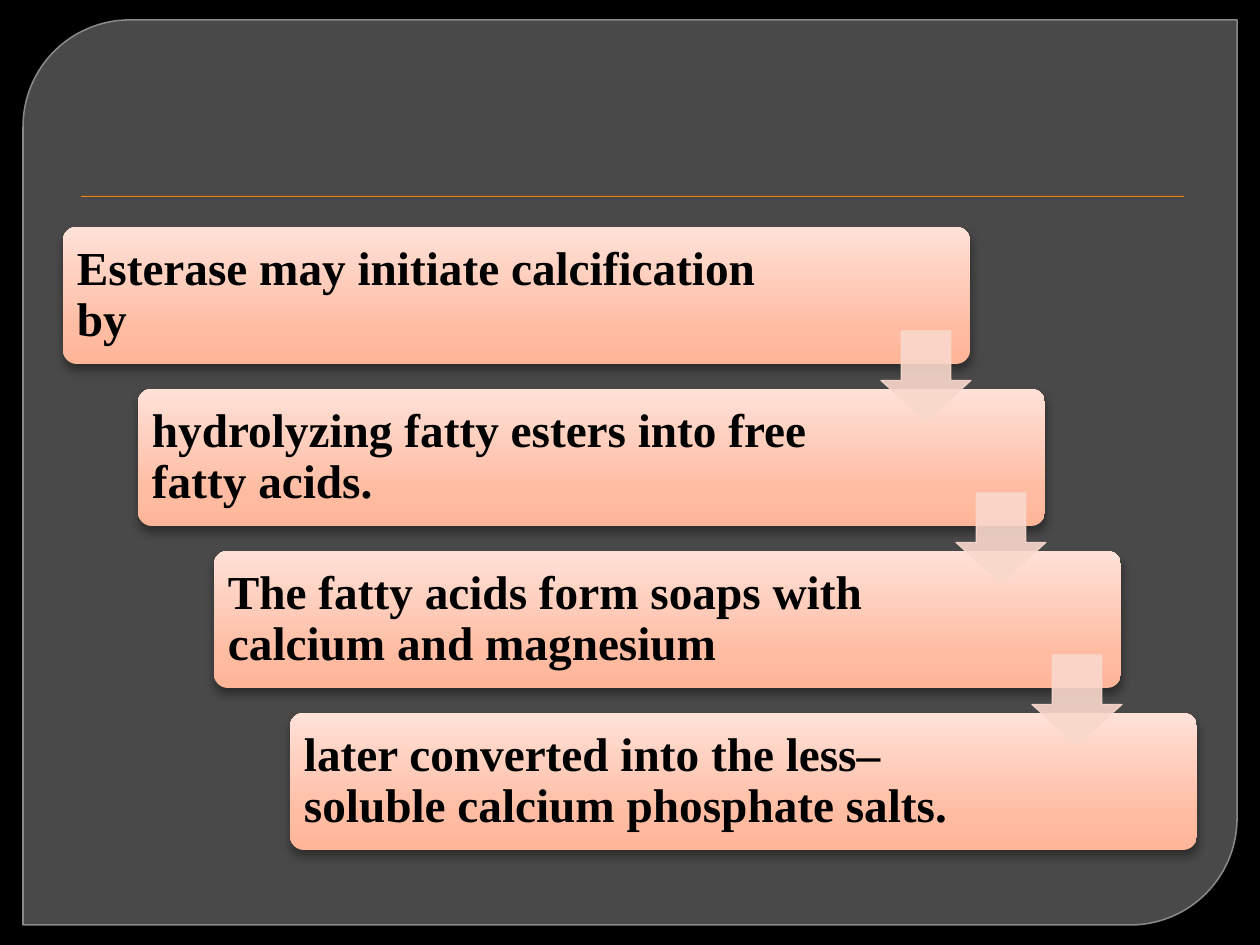
from dataclasses import dataclass

from lxml import etree
from pptx import Presentation
from pptx.dml.color import RGBColor
from pptx.enum.shapes import MSO_SHAPE
from pptx.enum.text import MSO_ANCHOR
from pptx.oxml import parse_xml
from pptx.util import Emu, Pt

PANEL = MSO_SHAPE.ROUND_2_DIAG_RECTANGLE
RECT = MSO_SHAPE.RECTANGLE
ROUND = MSO_SHAPE.ROUNDED_RECTANGLE
ARROW = MSO_SHAPE.DOWN_ARROW
MIDDLE = MSO_ANCHOR.MIDDLE
NS = "http://schemas.openxmlformats.org/drawingml/2006/main"
STOPS = ((0, "FFB598"), (25, "FFBCA2"), (100, "FFE1D8"))
PEACH = "F9D8CC"


@dataclass
class Box:
    x: int
    y: int
    w: int
    h: int


@dataclass
class Step:
    box: Box
    text: str


def px(n: int) -> Emu:
    return Emu(round(n * 914400 / 126))


def paint(color, value: str) -> None:
    color.rgb = RGBColor.from_string(value)


def fade(part, alpha: int) -> None:
    for color in part.iter(f"{{{NS}}}srgbClr"):
        etree.SubElement(color, f"{{{NS}}}alpha", val=str(alpha * 1000))


def add_shape(slide, kind, box: Box, adj: tuple = ()):
    shape = slide.shapes.add_shape(kind, px(box.x), px(box.y), px(box.w), px(box.h))
    shape.shadow.inherit = False
    shape.line.fill.background()
    for i, value in enumerate(adj):
        shape.adjustments[i] = value
    return shape


def fill(shape, value: str) -> None:
    shape.fill.solid()
    paint(shape.fill.fore_color, value)


def edge(shape, value: str, width: float) -> None:
    paint(shape.line.color, value)
    shape.line.width = Pt(width)


def blend(shape) -> None:
    stops = "".join(
        f'<a:gs pos="{pos * 1000}"><a:srgbClr val="{value}"/></a:gs>'
        for pos, value in STOPS
    )
    grad = parse_xml(
        f'<a:gradFill xmlns:a="{NS}" rotWithShape="1"><a:gsLst>{stops}</a:gsLst>'
        '<a:lin ang="16200000" scaled="0"/></a:gradFill>'
    )
    shape._element.spPr.find(f"{{{NS}}}prstGeom").addnext(grad)


def shade(shape, blur: float, dist: float, alpha: int) -> None:
    effects = shape._element.spPr.find(f"{{{NS}}}effectLst")
    effects.append(parse_xml(
        f'<a:outerShdw xmlns:a="{NS}" blurRad="{Pt(blur)}" dist="{Pt(dist)}" '
        'dir="5400000" rotWithShape="0"><a:srgbClr val="000000">'
        f'<a:alpha val="{alpha * 1000}"/></a:srgbClr></a:outerShdw>'
    ))


def draw_back(slide) -> None:
    back = slide.background.fill
    back.solid()
    paint(back.fore_color, "000000")
    panel = add_shape(slide, PANEL, Box(23, 20, 1214, 905), (0.118, 0))
    fill(panel, "717171")
    fade(panel._element.spPr, 65)
    edge(panel, "898989", 0.87)
    rule = add_shape(slide, RECT, Box(81, 196, 1103, 1))
    fill(rule, "F07F09")
    shade(rule, 1, 1, 75)


def draw_step(slide, step: Step) -> None:
    box = step.box
    card = add_shape(slide, ROUND, box, (0.1,))
    blend(card)
    shade(card, 5.2, 3, 40)
    label = slide.shapes.add_textbox(px(box.x), px(box.y), px(743), px(box.h))
    frame = label.text_frame
    frame.word_wrap = True
    frame.vertical_anchor = MIDDLE
    frame.margin_left = frame.margin_right = px(14)
    frame.margin_top = frame.margin_bottom = px(14)
    frame.text = step.text
    line = frame.paragraphs[0]
    line.line_spacing = 0.9
    font = line.runs[0].font
    font.name = "Times New Roman"
    font.size = Pt(27)
    font.bold = True
    paint(font.color, "000000")


def draw_arrow(slide, step: Step) -> None:
    box = Box(step.box.x + 818, step.box.y + 104, 90, 90)
    arrow = add_shape(slide, ARROW, box, (0.55, 0.45))
    fill(arrow, PEACH)
    edge(arrow, PEACH, 0.75)
    fade(arrow._element.spPr, 90)


def main() -> None:
    deck = Presentation()
    deck.slide_width, deck.slide_height = px(1260), px(945)
    slide = deck.slides.add_slide(deck.slide_layouts[6])
    texts = (
        "Esterase may initiate calcification by",
        "hydrolyzing fatty esters into free fatty acids.",
        "The fatty acids form soaps with calcium and magnesium",
        "later converted into the less–soluble calcium phosphate salts.",
    )
    steps = [
        Step(Box(63 + i * 227 // 3, 227 + i * 162, 907, 137), text)
        for i, text in enumerate(texts)
    ]
    draw_back(slide)
    for step in steps:
        draw_step(slide, step)
    for step in steps[:-1]:
        draw_arrow(slide, step)
    deck.save("out.pptx")


if __name__ == "__main__":
    main()
